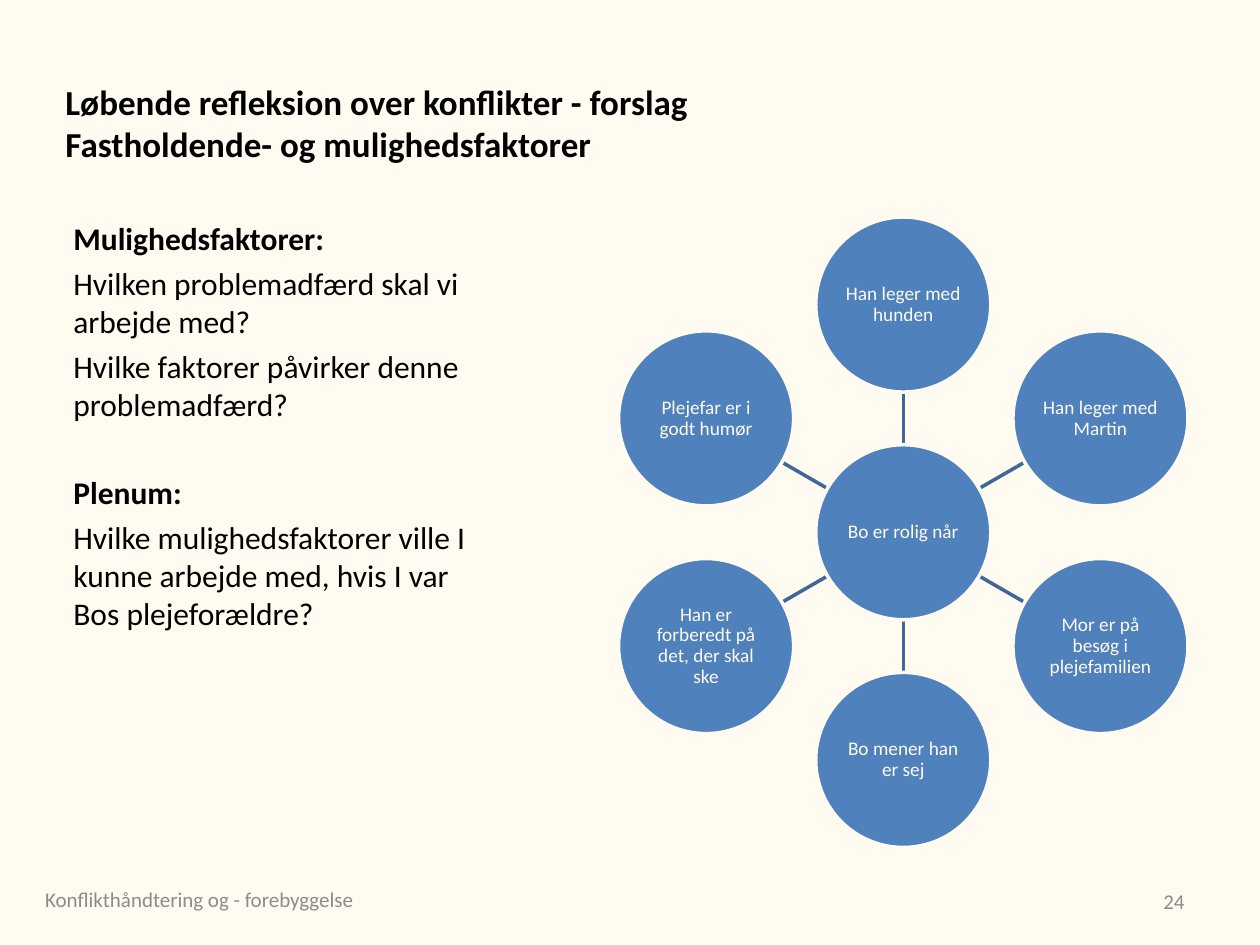
"""Build the slide on possibility factors with its radial diagram."""
import math

import lxml.etree
import pptx
import pptx.dml.color
import pptx.enum.shapes
import pptx.enum.text
import pptx.oxml.ns
import pptx.util

Cm = pptx.util.Cm
Pt = pptx.util.Pt
Align = pptx.enum.text.PP_ALIGN
Middle = pptx.enum.text.MSO_ANCHOR.MIDDLE
Top = pptx.enum.text.MSO_ANCHOR.TOP


def color(value):
    return pptx.dml.color.RGBColor.from_string(value)


def write(frame, lines, size, ink, align=Align.LEFT, anchor=Middle):
    frame.word_wrap = True
    frame.vertical_anchor = anchor
    for index, (text, bold, before) in enumerate(lines):
        paragraph = frame.paragraphs[0] if index == 0 else frame.add_paragraph()
        paragraph.text = text
        paragraph.alignment = align
        paragraph.space_before = Pt(before)
        paragraph.font.name = "Calibri"
        paragraph.font.size = Pt(size)
        paragraph.font.bold = bold
        paragraph.font.color.rgb = color(ink)


deck = pptx.Presentation()
deck.slide_width, deck.slide_height = Cm(25.4), Cm(19.05)
slide = deck.slides.add_slide(deck.slide_layouts[6])
slide.background.fill.solid()
slide.background.fill.fore_color.rgb = color("FFFBF0")

heading = [("Løbende refleksion over konflikter - forslag\n"
            "Fastholdende- og mulighedsfaktorer", True, 0)]
questions = [
    ("Mulighedsfaktorer:", True, 0),
    ("Hvilken problemadfærd skal vi arbejde med?", False, 4),
    ("Hvilke faktorer påvirker denne problemadfærd?", False, 4),
    ("Plenum:", True, 29),
    ("Hvilke mulighedsfaktorer ville I kunne arbejde med, "
     "hvis I var Bos plejeforældre?", False, 4),
]
footer = [("Konflikthåndtering og - forebyggelse", False, 0)]
page_number = [("24", False, 0)]

for left, top, width, height, lines, size, ink, align, anchor in [
    (1.07, 0.89, 22.86, 3.18, heading, 20, "000000", Align.LEFT, Middle),
    (1.23, 4.3, 8.94, 12.78, questions, 18, "000000", Align.LEFT, Top),
    (0.66, 17.63, 8.05, 1.01, footer, 12, "8C8C8C", Align.LEFT, Middle),
    (18.2, 17.66, 5.93, 1.01, page_number, 12, "8C8C8C", Align.RIGHT, Middle),
]:
    area = slide.shapes.add_textbox(Cm(left), Cm(top), Cm(width), Cm(height))
    write(area.text_frame, lines, size, ink, align, anchor)

center_x, center_y = 18.21, 10.73
diameter, orbit = 3.53, 4.59
spoke_start, spoke_end = diameter / 2, orbit - diameter / 2
factors = [
    "Han leger med hunden",
    "Han leger med Martin",
    "Mor er på besøg i plejefamilien",
    "Bo mener han er sej",
    "Han er forberedt på det, der skal ske",
    "Plejefar er i godt humør",
]
circles = [("Bo er rolig når", center_x, center_y)]

for index, factor in enumerate(factors):
    angle = math.radians(360 / len(factors) * index - 90)
    across, down = math.cos(angle), math.sin(angle)
    circles.append((factor, center_x + orbit * across, center_y + orbit * down))
    spoke = slide.shapes.add_connector(
        pptx.enum.shapes.MSO_CONNECTOR.STRAIGHT,
        Cm(center_x + spoke_start * across), Cm(center_y + spoke_start * down),
        Cm(center_x + spoke_end * across), Cm(center_y + spoke_end * down))
    spoke.line.color.rgb = color("3F6797")
    spoke.line.width = Pt(2)
    lxml.etree.SubElement(spoke.element.spPr, pptx.oxml.ns.qn("a:effectLst"))

for label, x, y in circles:
    circle = slide.shapes.add_shape(
        pptx.enum.shapes.MSO_SHAPE.OVAL, Cm(x - diameter / 2),
        Cm(y - diameter / 2), Cm(diameter), Cm(diameter))
    circle.shadow.inherit = False
    circle.fill.solid()
    circle.fill.fore_color.rgb = color("4F81BD")
    circle.line.color.rgb = color("FFFBF0")
    circle.line.width = Pt(2)
    frame = circle.text_frame
    frame.margin_left = frame.margin_right = Cm(0.03)
    frame.margin_top = frame.margin_bottom = Cm(0.03)
    write(frame, [(label, False, 0)], 11, "FFFBF0", Align.CENTER)
    frame.paragraphs[0].line_spacing = 0.9

deck.save("out.pptx")
